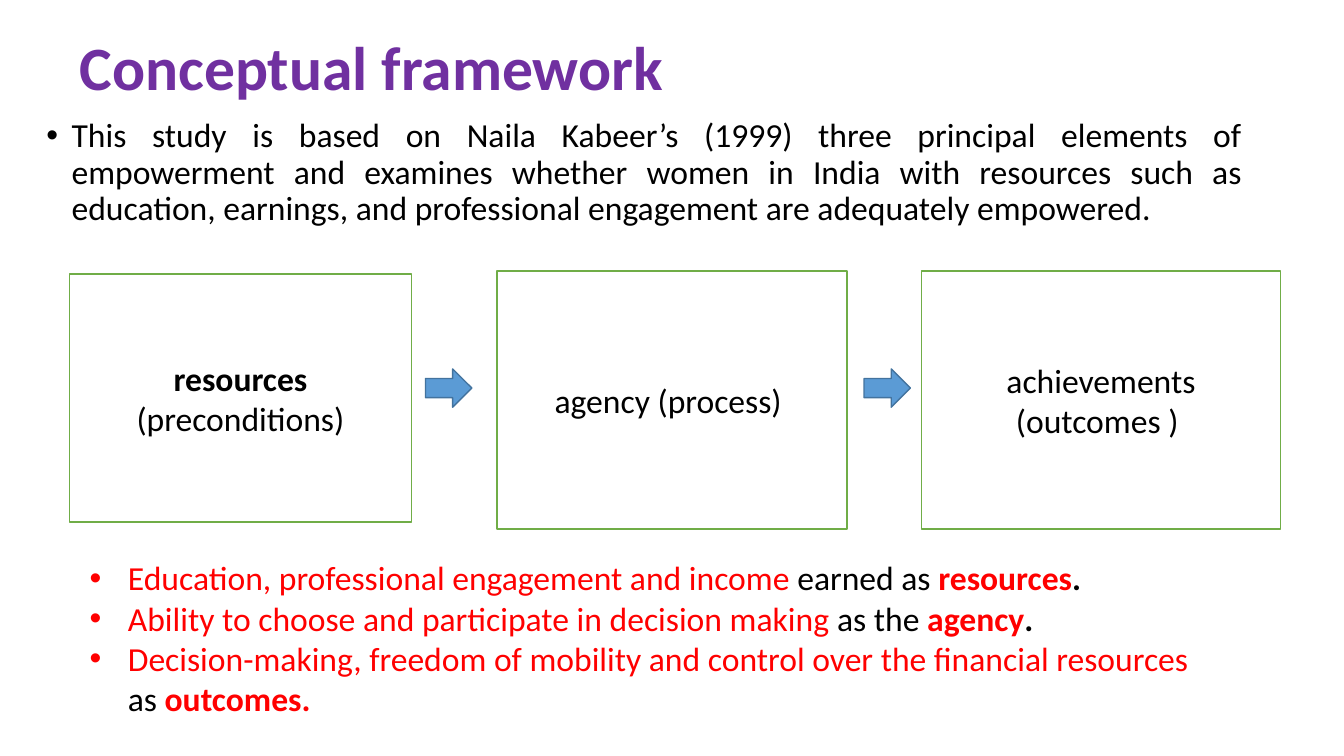
from lxml import etree
from pptx import Presentation
from pptx.dml.color import RGBColor
from pptx.enum.shapes import MSO_SHAPE
from pptx.enum.text import MSO_ANCHOR, PP_ALIGN
from pptx.oxml.ns import qn
from pptx.util import Emu, Pt

RECT, ARROW = MSO_SHAPE.RECTANGLE, MSO_SHAPE.RIGHT_ARROW
LEFT, CENTER, JUSTIFY = PP_ALIGN.LEFT, PP_ALIGN.CENTER, PP_ALIGN.JUSTIFY
TOP, MIDDLE = MSO_ANCHOR.TOP, MSO_ANCHOR.MIDDLE

EMU_PER_PX = 9144  # 100 px to the inch
BLACK, RED, PURPLE, WHITE = "000000", "FF0000", "7030A0", "FFFFFF"
GREEN, BLUE, DARK_BLUE = "70AD47", "5B9BD5", "43739E"


def px(n):
    return Emu(n * EMU_PER_PX)


def rgb(hex_color):
    return RGBColor.from_string(hex_color)


class SlideBuilder:
    font, size = "Calibri", 24

    def __init__(self, slide):
        self.slide = slide

    def set_text(self, tf, paragraphs, align=LEFT, size=None, spacing=None, before=0, indent=0):
        """Fill a frame; each paragraph is a list of (text, colour, bold) runs."""
        tf.word_wrap = True
        for i, runs in enumerate(paragraphs):
            p = tf.add_paragraph() if i else tf.paragraphs[0]
            p.alignment = align
            p.space_before = Pt(before)
            if spacing:
                p.line_spacing = spacing
            _, color, bold = runs[0]
            p.font.name, p.font.size, p.font.bold = self.font, Pt(size or self.size), bold
            p.font.color.rgb = rgb(color)
            for text, run_color, run_bold in runs:
                r = p.add_run()
                r.text = text
                if run_color != color:
                    r.font.color.rgb = rgb(run_color)
                if run_bold != bold:
                    r.font.bold = run_bold
            if indent:
                self.bullet(p, indent)

    def bullet(self, p, indent):
        """Give a paragraph a round bullet and a hanging indent."""
        pPr = p._p.get_or_add_pPr()
        pPr.set("marL", str(px(indent)))
        pPr.set("indent", str(-px(indent)))
        font = etree.Element(qn("a:buFont"), typeface="Arial")
        char = etree.Element(qn("a:buChar"), char="•")
        at = pPr.index(pPr.find(qn("a:defRPr")))
        pPr[at:at] = [font, char]

    def placeholder(self, idx, box, paragraphs, anchor, **style):
        sp = self.slide.placeholders[idx]
        sp.left, sp.top, sp.width, sp.height = map(px, box)
        sp.text_frame.vertical_anchor = anchor
        self.set_text(sp.text_frame, paragraphs, **style)

    def shape(self, kind, box, fill, line, paragraphs=()):
        sp = self.slide.shapes.add_shape(kind, *map(px, box))
        sp.shadow.inherit = False
        sp.fill.solid()
        sp.fill.fore_color.rgb = rgb(fill)
        sp.line.color.rgb = rgb(line)
        sp.line.width = Pt(1)
        sp.text_frame.vertical_anchor = MIDDLE
        self.set_text(sp.text_frame, paragraphs, align=CENTER)

    def text_box(self, box, paragraphs, **style):
        sp = self.slide.shapes.add_textbox(*map(px, box))
        self.set_text(sp.text_frame, paragraphs, **style)


def main():
    prs = Presentation()
    prs.slide_width, prs.slide_height = px(1333), px(750)
    s = SlideBuilder(prs.slides.add_slide(prs.slide_layouts[1]))

    s.placeholder(0, (69, 26, 1150, 87), [[("Conceptual framework", PURPLE, True)]],
                  MIDDLE, size=44, spacing=0.9)
    intro = ("This study is based on Naila Kabeer’s (1999) three principal elements of "
             "empowerment and examines whether women in India with resources such as "
             "education, earnings, and professional engagement are adequately empowered.")
    s.placeholder(1, (36, 113, 1206, 599), [[(intro, BLACK, False)]],
                  TOP, align=JUSTIFY, spacing=0.9, before=10, indent=25)

    stages = [
        ((69, 272, 339, 246), [("resources", True), ("(preconditions)", False)]),
        ((493, 269, 347, 256), [("agency (process) ", False)]),
        ((914, 269, 356, 256), [("achievements (outcomes ) ", False)]),
    ]
    for box, lines in stages:
        s.shape(RECT, box, WHITE, GREEN, [[(text, BLACK, bold)] for text, bold in lines])
    for left in (422, 857):
        s.shape(ARROW, (left, 366, 46, 38), BLUE, DARK_BLUE)

    measures = [
        [("Education, professional engagement and income ", RED, False),
         ("earned as ", BLACK, False), ("resources", RED, True), (".", BLACK, True)],
        [("Ability to choose and participate in decision making ", RED, False),
         ("as the ", BLACK, False), ("agency", RED, True), (".", BLACK, True)],
        [("Decision-making, freedom of mobility and control over the financial resources ",
          RED, False), ("as ", BLACK, False), ("outcomes.", RED, True)],
    ]
    s.text_box((79, 548, 1130, 172), measures, indent=38)

    prs.save("out.pptx")


if __name__ == "__main__":
    main()
